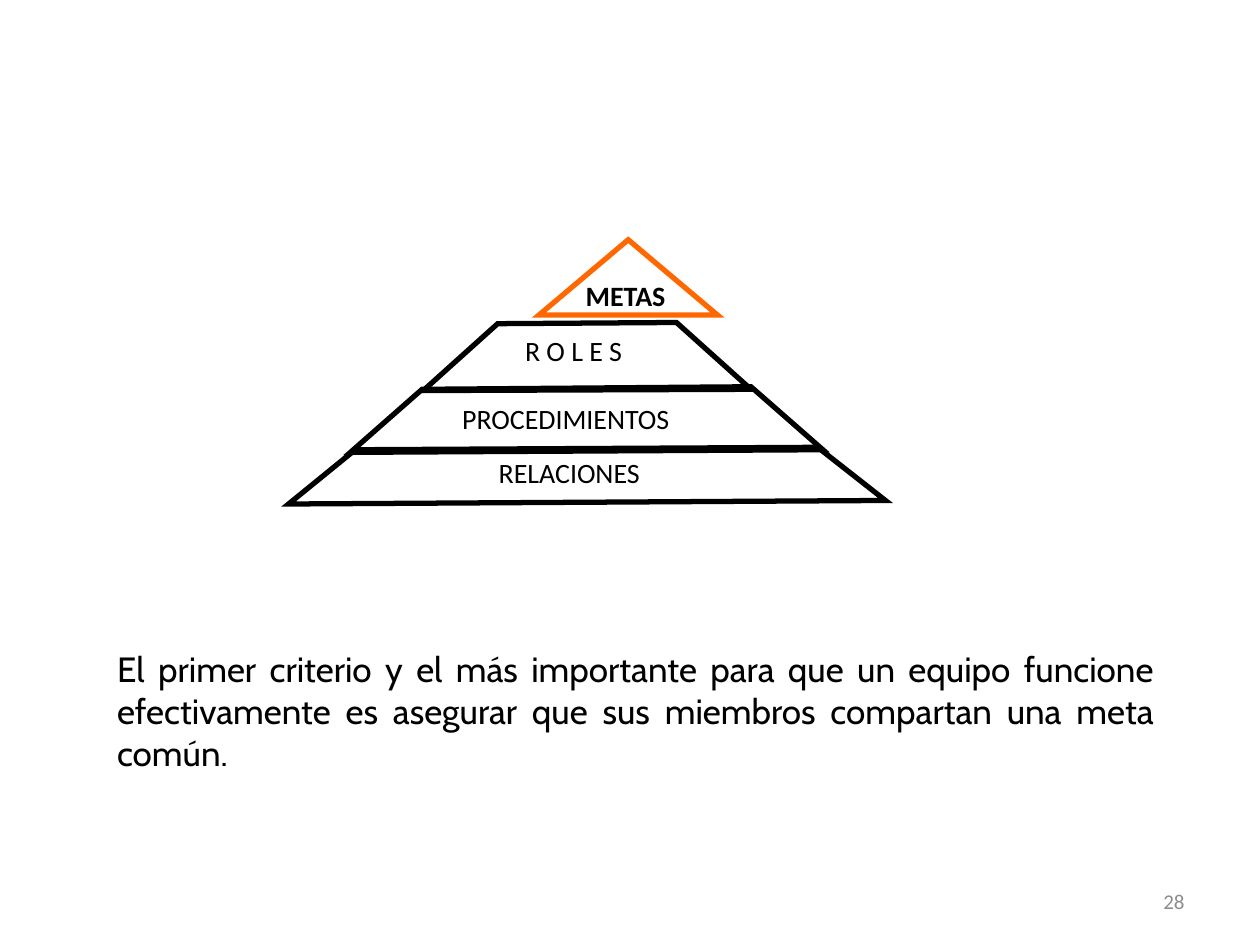
import dataclasses

import pptx
import pptx.dml.color
import pptx.enum.shapes
import pptx.enum.text
import pptx.oxml.ns
import pptx.util
from lxml import etree

Pt = pptx.util.Pt
ALIGN = pptx.enum.text.PP_ALIGN
ANCHOR = pptx.enum.text.MSO_ANCHOR
FIT = pptx.enum.text.MSO_AUTO_SIZE


@dataclasses.dataclass(frozen=True)
class Theme:
    ink: str = "000000"
    accent: str = "FF6801"
    muted: str = "8C8C8C"
    label_font: str = "Calibri"
    body_font: str = "Cabin"
    label_size: float = 16
    body_size: float = 20
    number_size: float = 12
    outline: float = 3


THEME = Theme()

# Labels and boxes (left, top, width, height), relative to the pyramid's box
PEAK = (144, 1, 102, 43)
PEAK_LABEL = ("METAS", (163.6, 19.5, 70.6, 26.6))
# Each tier: label, label box, corners from bottom right, anticlockwise
TIERS = [
    ("RELACIONES", (113.9, 121, 117.4, 26.6),
     [(342, 150), (303.3, 119.6), (39, 121), (0.9, 152)]),
    ("PROCEDIMIENTOS", (93, 90.1, 159.8, 26.6),
     [(306.2, 121), (265.1, 85), (77.2, 86.5), (36.2, 122.5)]),
    ("R O L E S", (129, 51.2, 86.4, 26.6),
     [(265.1, 86.5), (222.6, 48.3), (120.4, 49), (77.9, 87.2)]),
]
BODY = ("El primer criterio y el más importante para que un equipo funcione "
        "efectivamente es asegurar que sus miembros compartan una meta común.")


def shift(box, left, top):
    return (box[0] + left, box[1] + top, *box[2:])


def add_text(page, text, box, *, font=THEME.label_font, size=THEME.label_size,
             color=THEME.ink, bold=False, align=ALIGN.LEFT,
             anchor=ANCHOR.TOP, wrap=True, fit=FIT.SHAPE_TO_FIT_TEXT):
    frame = page.shapes.add_textbox(*map(Pt, box)).text_frame
    frame.word_wrap = wrap
    frame.auto_size = fit
    frame.vertical_anchor = anchor
    para = frame.paragraphs[0]
    para.alignment = align
    span = para.add_run()
    span.text = text
    span.font.name = font
    span.font.size = Pt(size)
    span.font.bold = bold
    span.font.color.rgb = pptx.dml.color.RGBColor.from_string(color)


def outline(shape, color):
    """Leave a shape hollow, with a sharp-cornered outline."""
    shape.shadow.inherit = False
    shape.fill.background()
    shape.line.color.rgb = pptx.dml.color.RGBColor.from_string(color)
    shape.line.width = Pt(THEME.outline)
    line = shape.line._get_or_add_ln()
    etree.SubElement(line, pptx.oxml.ns.qn("a:miter"), lim="800000")


def add_pyramid(page, left, top):
    # Peak
    peak = page.shapes.add_shape(
        pptx.enum.shapes.MSO_SHAPE.ISOSCELES_TRIANGLE,
        *map(Pt, shift(PEAK, left, top)))
    outline(peak, THEME.accent)
    text, box = PEAK_LABEL
    add_text(page, text, shift(box, left, top), bold=True, wrap=False)

    # Tiers, from the base up
    for text, box, corners in TIERS:
        points = [tuple(map(Pt, shift(corner, left, top))) for corner in corners]
        builder = page.shapes.build_freeform(*points[0])
        builder.add_line_segments(points[1:], close=True)
        outline(builder.convert_to_shape(), THEME.ink)
        add_text(page, text, shift(box, left, top), wrap=False)


def add_body(page, box):
    add_text(page, BODY, box, font=THEME.body_font, size=THEME.body_size,
             align=ALIGN.JUSTIFY)


def add_page_number(page, box):
    add_text(page, "28", box, size=THEME.number_size, color=THEME.muted,
             align=ALIGN.RIGHT, anchor=ANCHOR.MIDDLE, fit=FIT.NONE)


def main():
    deck = pptx.Presentation()
    deck.slide_width, deck.slide_height = Pt(720), Pt(540)
    page = deck.slides.add_slide(deck.slide_layouts[6])
    add_pyramid(page, 164, 136)
    add_body(page, (59.8, 366.5, 607, 80))
    add_page_number(page, (516, 500.5, 168, 28.8))
    deck.save("out.pptx")


if __name__ == "__main__":
    main()
